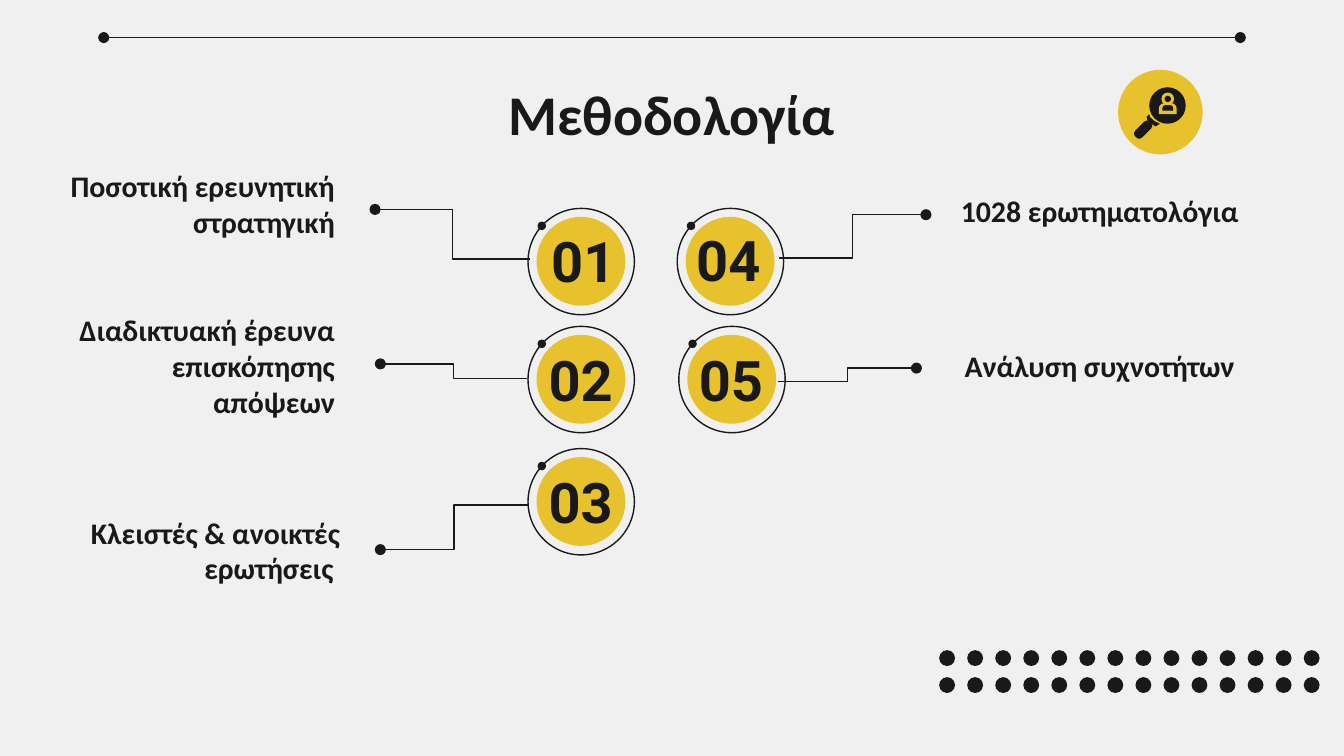
"""Build the methodology slide: five numbered steps linked to their descriptions."""
from dataclasses import dataclass

from lxml.etree import SubElement
from pptx import Presentation
from pptx.dml.color import RGBColor
from pptx.enum.shapes import MSO_CONNECTOR, MSO_SHAPE
from pptx.enum.text import MSO_ANCHOR, PP_ALIGN
from pptx.oxml.ns import qn
from pptx.util import Cm, Pt


@dataclass(frozen=True)
class Theme:
    ink: RGBColor = RGBColor(0x19, 0x19, 0x19)
    gold: RGBColor = RGBColor(0xE7, 0xC2, 0x2C)
    paper: RGBColor = RGBColor(0xF0, 0xF0, 0xF0)
    body_font: str = "Calibri"
    number_font: str = "Roboto"
    heading: Pt = Pt(30)
    label: Pt = Pt(16)
    rule: Pt = Pt(0.75)


theme = Theme()
deck = Presentation()
deck.slide_width, deck.slide_height = Cm(25.4), Cm(14.29)
slide = deck.slides.add_slide(deck.slide_layouts[6])
slide.background.fill.solid()
slide.background.fill.fore_color.rgb = theme.paper


def add_solid(kind, left, top, width, height, color):
    solid = slide.shapes.add_shape(kind, Cm(left), Cm(top), Cm(width), Cm(height))
    solid.shadow.inherit = False
    solid.fill.solid()
    solid.fill.fore_color.rgb = color
    solid.line.fill.background()
    return solid


def add_words(words, left, top, width, height, size, align,
              font=theme.body_font, anchor=MSO_ANCHOR.TOP):
    frame = slide.shapes.add_textbox(Cm(left), Cm(top), Cm(width), Cm(height)).text_frame
    frame.word_wrap = True
    frame.vertical_anchor = anchor
    frame.margin_left = frame.margin_right = Cm(0.25)
    frame.margin_top = frame.margin_bottom = Cm(0.25)
    paragraph = frame.paragraphs[0]
    paragraph.alignment = align
    run = paragraph.add_run()
    run.text = words
    run.font.name, run.font.size, run.font.bold = font, size, True
    run.font.color.rgb = theme.ink


add_words("Μεθοδολογία", 2, 1.25, 21.4, 1.6, theme.heading, PP_ALIGN.CENTER)

labels = [
    ("Ποσοτική ερευνητική στρατηγική", 0.64, 2.92, PP_ALIGN.RIGHT),
    ("Διαδικτυακή έρευνα επισκόπησης απόψεων", 0.64, 5.64, PP_ALIGN.RIGHT),
    ("Κλειστές & ανοικτές ερωτήσεις ", 0.74, 9.47, PP_ALIGN.RIGHT),
    ("1028 ερωτηματολόγια", 17.91, 3.4, PP_ALIGN.LEFT),
    ("Ανάλυση συχνοτήτων", 17.98, 6.32, PP_ALIGN.LEFT),
]
for words, left, top, align in labels:
    add_words(words, left, top, 5.94, 1.6, theme.label, align)

badges = [
    ("01", 9.98, 3.94, 10.01, 4.29),
    ("02", 9.98, 6.17, 9.96, 6.55),
    ("03", 9.98, 8.48, 9.96, 8.86),
    ("04", 12.8, 3.94, 12.75, 4.27),
    ("05", 12.83, 6.17, 12.8, 6.55),
]
for number, left, top, number_left, number_top in badges:
    ring = add_solid(MSO_SHAPE.OVAL, left, top, 2.01, 2.01, theme.paper)
    ring.fill.background()
    ring.line.color.rgb = theme.ink
    ring.line.width = theme.rule
    add_solid(MSO_SHAPE.OVAL, left + 0.18, top + 0.25, 0.16, 0.16, theme.ink)
    add_solid(MSO_SHAPE.OVAL, left + 0.16, top + 0.16, 1.68, 1.68, theme.gold)
    add_words(number, number_left, number_top, 2.03, 1.24, theme.heading,
              PP_ALIGN.CENTER, theme.number_font, MSO_ANCHOR.MIDDLE)

links = [
    (MSO_CONNECTOR.STRAIGHT, 1.96, 0.71, 23.44, 0.71, ("headEnd", "tailEnd")),
    (MSO_CONNECTOR.ELBOW, 10.01, 4.9, 7.09, 3.96, ("tailEnd",)),
    (MSO_CONNECTOR.ELBOW, 9.96, 7.16, 7.19, 6.88, ("tailEnd",)),
    (MSO_CONNECTOR.ELBOW, 9.98, 9.55, 7.19, 10.39, ("tailEnd",)),
    (MSO_CONNECTOR.ELBOW, 14.73, 4.88, 17.5, 4.06, ("tailEnd",)),
    (MSO_CONNECTOR.ELBOW, 14.71, 7.21, 17.32, 6.96, ("tailEnd",)),
]
for kind, start_x, start_y, end_x, end_y, dotted_ends in links:
    link = slide.shapes.add_connector(kind, Cm(start_x), Cm(start_y), Cm(end_x), Cm(end_y))
    link.line.color.rgb = theme.ink
    link.line.width = theme.rule
    properties = link._element.spPr
    for end in dotted_ends:
        SubElement(properties.find(qn("a:ln")), qn(f"a:{end}"), type="oval")
    SubElement(properties, qn("a:effectLst"))

for column in range(14):
    for row in range(2):
        add_solid(MSO_SHAPE.OVAL, 17.75 + 0.53 * column, 12.29 + 0.51 * row,
                  0.3, 0.3, theme.ink)

add_solid(MSO_SHAPE.OVAL, 21.13, 1.32, 1.6, 1.6, theme.gold)
add_solid(MSO_SHAPE.OVAL, 21.72, 1.65, 0.69, 0.69, theme.ink)
for left, top, width, height, color in [
    (21.9, 1.95, 0.34, 0.21, theme.gold),
    (21.97, 1.99, 0.2, 0.1, theme.ink),
]:
    shoulders = add_solid(MSO_SHAPE.ROUND_2_SAME_RECTANGLE, left, top, width, height, color)
    shoulders.adjustments[0] = 0.5
add_solid(MSO_SHAPE.OVAL, 21.95, 1.75, 0.24, 0.24, theme.gold)
add_solid(MSO_SHAPE.OVAL, 22.01, 1.81, 0.12, 0.12, theme.ink)
handle = add_solid(MSO_SHAPE.ROUNDED_RECTANGLE, 21.41, 2.36, 0.39, 0.18, theme.ink)
handle.adjustments[0] = 0.4
handle.rotation = -45

collar_outline = slide.shapes.build_freeform(2172, 216, scale=Cm(0.01))
collar_outline.add_line_segments([
    (2167, 221), (2169, 229), (2179, 236), (2184, 239),
    (2189, 236), (2192, 234), (2182, 229), (2174, 222),
])
collar = collar_outline.convert_to_shape()
collar.shadow.inherit = False
collar.fill.solid()
collar.fill.fore_color.rgb = theme.ink
collar.line.fill.background()

deck.save("out.pptx")
